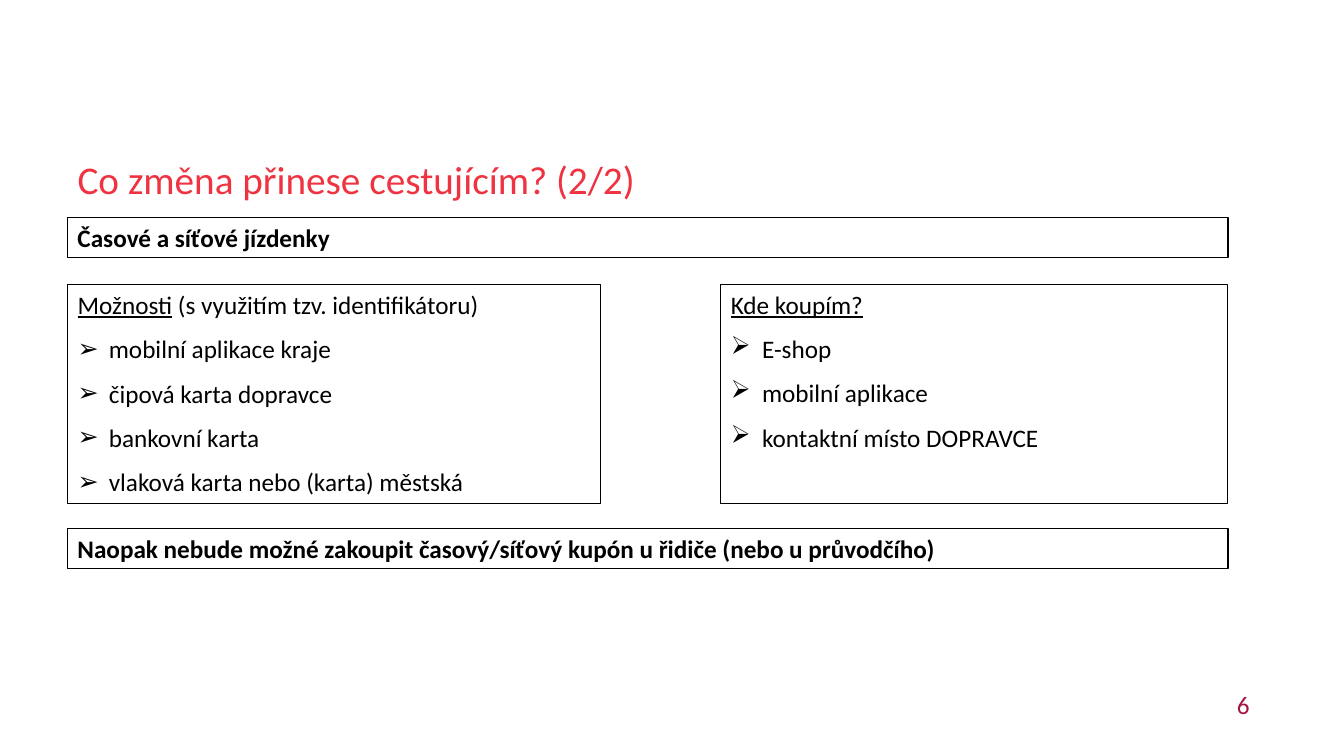
from lxml.etree import SubElement
from pptx import Presentation
from pptx.dml.color import RGBColor
from pptx.enum.shapes import MSO_SHAPE
from pptx.enum.text import MSO_ANCHOR, MSO_AUTO_SIZE, PP_ALIGN
from pptx.oxml.ns import qn
from pptx.util import Pt

PX = 9144  # EMU per px, 100 px to the inch
COLORS = {"title": "EF3340", "text": "000000", "border": "000000", "number": "A7143F"}
FRAME = {"word_wrap": True, "auto_size": MSO_AUTO_SIZE.NONE,
         "margin_left": 10 * PX, "margin_right": 10 * PX,
         "margin_top": 5 * PX, "margin_bottom": 5 * PX}
INDENT = 31

LEFT, WIDTH = 67, 1151
TITLE = (LEFT, 143, WIDTH, 63)
TICKETS = (LEFT, 216, WIDTH, 40)
OPTIONS = (LEFT, 282, 529, 218)
SHOPS = (715, 282, 502, 218)
WARNING = (LEFT, 524, WIDTH, 40)
NUMBER = (1217, 679, 50, 41)


def set_all(target, values):
    for name, value in values.items():
        setattr(target, name, value)


def place(shape, box):
    sides = ("left", "top", "width", "height")
    set_all(shape, {side: px * PX for side, px in zip(sides, box)})


def write(paragraph, text, color="text", size=18, **formats):
    run = paragraph.add_run()
    run.text = text
    set_all(run.font, {"name": "Calibri", "size": Pt(size), **formats})
    run.font.color.rgb = RGBColor.from_string(COLORS[color])


def prepare(shape, anchor=MSO_ANCHOR.TOP):
    """Set up the text frame and return its first paragraph."""
    set_all(shape.text_frame, {**FRAME, "vertical_anchor": anchor})
    first = shape.text_frame.paragraphs[0]
    set_all(first, {"alignment": PP_ALIGN.LEFT, "space_before": Pt(0)})
    return first


def outline(shape):
    shape.line.color.rgb = RGBColor.from_string(COLORS["border"])
    shape.line.width = Pt(0.75)


def add_frame(slide, box):
    frame = slide.shapes.add_shape(MSO_SHAPE.RECTANGLE, *(px * PX for px in box))
    frame.shadow.inherit = False
    frame.fill.background()
    return frame


def fill_title(title, box, text):
    place(title, box)
    paragraph = prepare(title, MSO_ANCHOR.BOTTOM)
    paragraph.line_spacing = 0.9
    write(paragraph, text, "title", 28)


def add_banner(slide, box, text):
    banner = add_frame(slide, box)
    outline(banner)
    write(prepare(banner), text, bold=True)


def fill_list(panel, box, heading, note, items):
    """Underlined heading, followed by arrow bullets."""
    place(panel, box)
    outline(panel)
    first = prepare(panel)
    write(first, heading, underline=True)
    if note:
        write(first, note)
    for item in items:
        paragraph = panel.text_frame.add_paragraph()
        properties = paragraph._p.get_or_add_pPr()
        properties.set("marL", str(INDENT * PX))
        properties.set("indent", str(-INDENT * PX))
        SubElement(properties, qn("a:buChar")).set("char", "➢")
        set_all(paragraph, {"alignment": PP_ALIGN.LEFT, "space_before": Pt(10)})
        write(paragraph, item)


def add_number(slide, box, text):
    number = slide.shapes.add_textbox(*(px * PX for px in box))
    write(prepare(number), text, "number")


def main():
    deck = Presentation()
    set_all(deck, {"slide_width": 1333 * PX, "slide_height": 750 * PX})
    slide = deck.slides.add_slide(deck.slide_layouts[0])

    # Title and heading of the ticket type
    fill_title(slide.shapes.title, TITLE, "Co změna přinese cestujícím? (2/2)")
    add_banner(slide, TICKETS, "Časové a síťové jízdenky")

    # Options and points of sale
    fill_list(slide.placeholders[1], OPTIONS, "Možnosti", " (s využitím tzv. identifikátoru)",
              ["mobilní aplikace kraje", "čipová karta dopravce", "bankovní karta",
               "vlaková karta nebo (karta) městská"])
    fill_list(add_frame(slide, SHOPS), SHOPS, "Kde koupím?", "",
              ["E-shop", "mobilní aplikace", "kontaktní místo DOPRAVCE"])

    # Warning and slide number
    add_banner(slide, WARNING,
               "Naopak nebude možné zakoupit časový/síťový kupón u řidiče (nebo u průvodčího)")
    add_number(slide, NUMBER, "6")
    deck.save("out.pptx")


if __name__ == "__main__":
    main()
